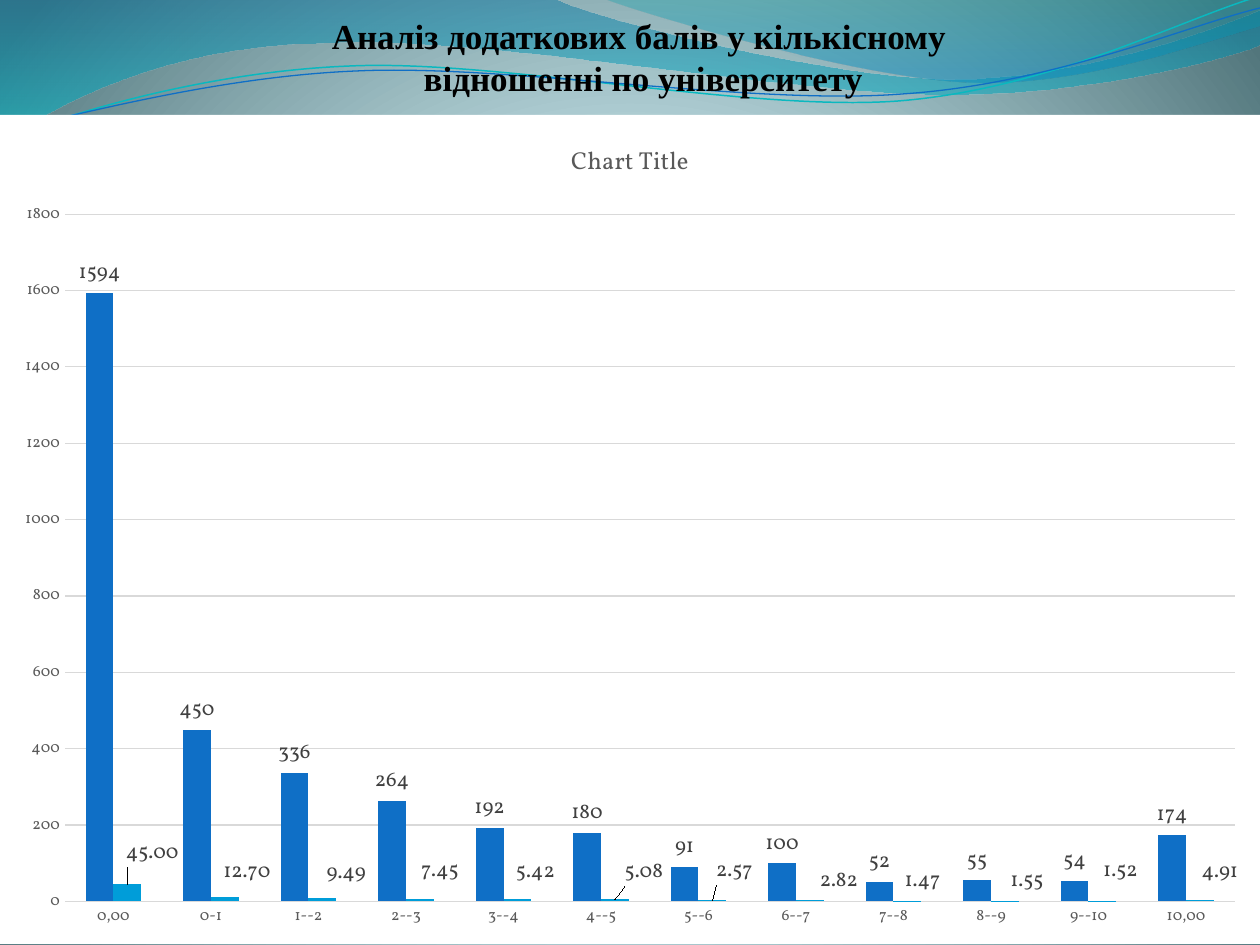
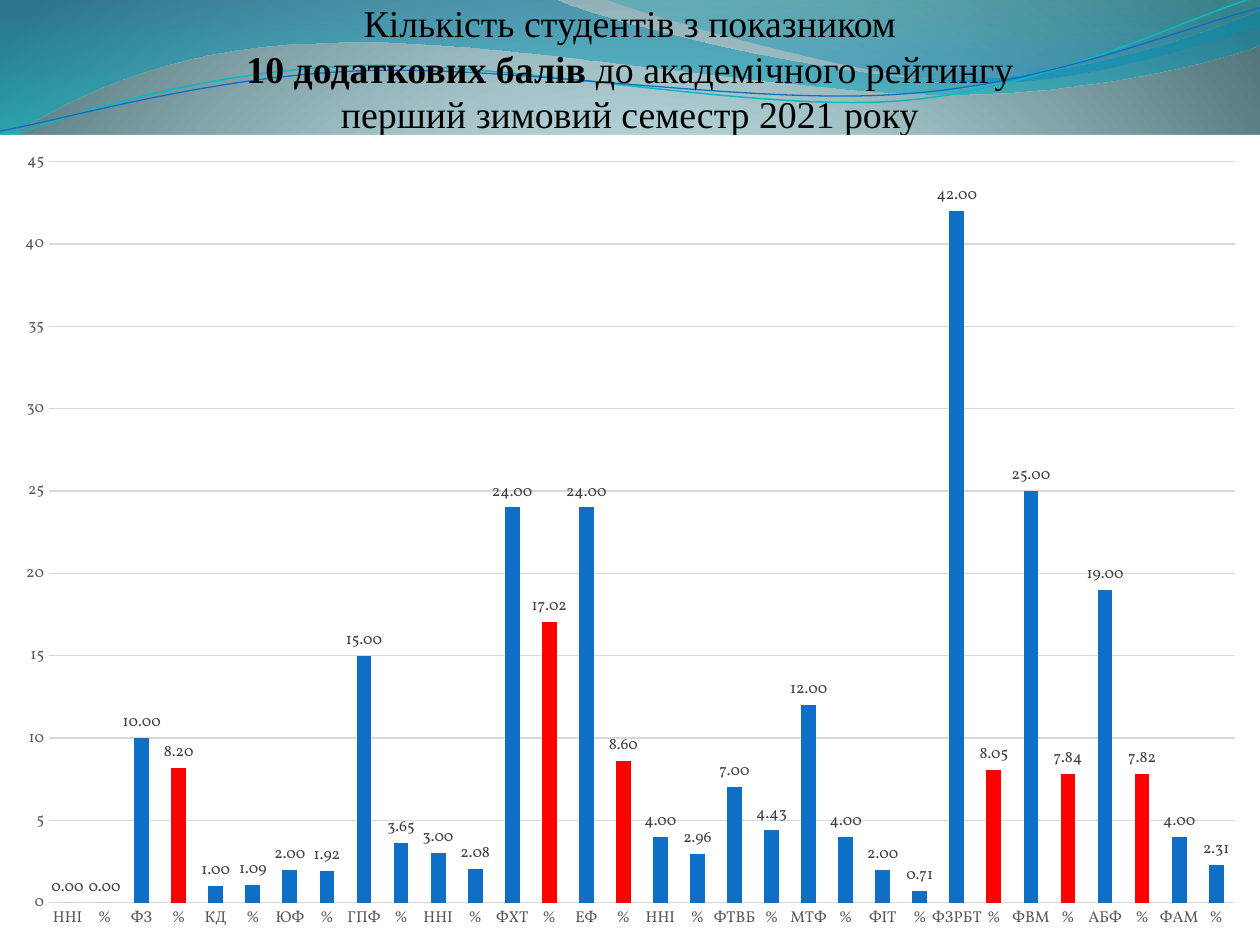
from lxml import etree
from pptx import Presentation
from pptx import util as u
from pptx.chart.data import CategoryChartData
from pptx.dml.color import RGBColor
from pptx.enum import chart as ch
from pptx.enum import text as tx
from pptx.oxml import parse_xml
from pptx.oxml.ns import nsdecls, qn

PX = 914400 / 126

BLACK = RGBColor(0x00, 0x00, 0x00)
WHITE = "FFFFFF"
BLUE = RGBColor(0x0F, 0x6F, 0xC6)
SKY = RGBColor(0x00, 0x9D, 0xD9)
RED = RGBColor(0xFF, 0x00, 0x00)
TEAL = RGBColor(0x0A, 0xB8, 0xBF)
GRID = RGBColor(0xD9, 0xD9, 0xD9)
AXIS_TEXT = RGBColor(0x59, 0x59, 0x59)
LABEL_TEXT = RGBColor(0x40, 0x40, 0x40)
TITLE_FONT = "Times New Roman"
CHART_FONT = "Vollkorn"

# Gradient stops: position %, colour, opacity %
BACKDROP = [(0, "DEFBFF", 100), (25, "DDFAFF", 100), (100, "52767C", 100)]
RADIAL = ('<a:path path="circle"><a:fillToRect l="10000" t="110000" '
          'r="10000" b="100000"/></a:path>')
DOWNWARD = '<a:lin ang="5400000" scaled="0"/>'

# Outlines in px: a pair is a straight step, three pairs are a Bezier curve
BANDS = [
    ([(0, 0), (554, -1),
      ((600, 21), (837, 79), (955, 79)), ((1074, 79), (1207, 33), (1260, 11)),
      (1261, 45), ((1238, 55), (1096, 96), (940, 94)),
      ((784, 94), (481, 35), (324, 43)), ((163, 45), (58, 105), (-1, 142))],
     [(0, "0074A1", 45), (100, "00C6CF", 55)]),
    ([(604, -1), ((641, 14), (859, 78), (969, 82)),
      ((1079, 87), (1211, 40), (1260, 26)), (1260, 0)],
     [(0, "00A1A9", 30), (80, "008BBF", 45)]),
]
RIBBONS = [
    ([(0, 140), ((60, 117), (199, 72), (349, 66)),
      ((498, 59), (747, 112), (898, 101)), ((1050, 89), (1182, 19), (1257, -3))],
     TEAL, 0.85),
    ([(0, 131), ((59, 121), (207, 77), (357, 71)),
      ((508, 64), (752, 106), (903, 94)), ((1053, 84), (1186, 26), (1260, 8))],
     BLUE, 0.75),
]

FACULTIES = [
    ("ННІ", 0, 0), ("ФЗ", 10, 8.2), ("КД", 1, 1.09), ("ЮФ", 2, 1.92),
    ("ГПФ", 15, 3.65), ("ННІ", 3, 2.08), ("ФХТ", 24, 17.02), ("ЕФ", 24, 8.6),
    ("ННІ", 4, 2.96), ("ФТВБ", 7, 4.43), ("МТФ", 12, 4), ("ФІТ", 2, 0.71),
    ("ФЗРБТ", 42, 8.05), ("ФВМ", 25, 7.84), ("АБФ", 19, 7.82), ("ФАМ", 4, 2.31),
]
HIGH_SHARE = 7

SLIDES = [
    dict(
        title=[[("Аналіз додаткових балів у кількісному", True)],
               [(" відношенні по університету", True)]],
        title_box=(72, 8, 1134, 97), title_size=20,
        title_anchor=tx.MSO_ANCHOR.TOP, title_insets=(13, 6, 13, 6),
        chart_title="Chart Title", chart_box=(0, 115, 1260, 829), label_size=12,
        categories=["0,00", "0-1", "1--2", "2--3", "3--4", "4--5", "5--6",
                    "6--7", "7--8", "8--9", "9--10", "10,00"],
        series=[
            dict(values=[1594, 450, 336, 264, 192, 180, 91, 100, 52, 55, 54, 174],
                 color=BLUE, format="General"),
            dict(values=[45, 12.7, 9.49, 7.45, 5.42, 5.08, 2.57, 2.82, 1.47,
                         1.55, 1.52, 4.91],
                 color=SKY, format="0.00",
                 label_shifts=[(25, -12), (22, -5), (24, -5), (20, -8), (18, -8),
                               (29, -8), (22, -10), (29, 0), (15, 0), (22, 0),
                               (18, -10), (20, -8)]),
        ],
    ),
    dict(
        title=[[("Кількість студентів з показником", False)],
               [(" ", False), ("10 додаткових балів ", True),
                ("до академічного рейтингу ", False)],
               [("перший зимовий семестр 2021 року", False)]],
        title_box=(63, 37, 1134, 99), title_size=21.6,
        title_anchor=tx.MSO_ANCHOR.BOTTOM, title_insets=(0, 6, 0, 0),
        chart_title=None, chart_box=(0, 135, 1260, 810), label_size=9,
        categories=[c for name, _, _ in FACULTIES for c in (name, "%")],
        series=[
            dict(values=[v for _, count, share in FACULTIES for v in (count, share)],
                 color=BLUE, format="0.00",
                 red_points=[2 * i + 1 for i, (_, _, share) in enumerate(FACULTIES)
                             if share > HIGH_SHARE]),
        ],
    ),
]


def px(*lengths):
    return [u.Emu(round(n * PX)) for n in lengths]


def set_gradient(element, stops, shade):
    """Turn the first solid fill inside element into a gradient."""
    marks = "".join(
        f'<a:gs pos="{pos * 1000}"><a:srgbClr val="{color}">'
        f'<a:alpha val="{opacity * 1000}"/></a:srgbClr></a:gs>'
        for pos, color, opacity in stops)
    solid = next(element.iter(qn("a:solidFill")))
    solid.getparent().replace(solid, parse_xml(
        f'<a:gradFill {nsdecls("a")} rotWithShape="1">'
        f'<a:gsLst>{marks}</a:gsLst>{shade}</a:gradFill>'))


def is_curve(step):
    return len(step) == 3


def add_outline(slide, outline, close):
    """Build through all points, then join each curve's three into a Bezier."""
    start, *steps = outline
    points = [p for step in steps for p in (step if is_curve(step) else [step])]
    builder = slide.shapes.build_freeform(*start, scale=PX)
    builder.add_line_segments(points, close=close)
    shape = builder.convert_to_shape()
    shape.shadow.inherit = False
    segments = iter(list(shape.element.iter(qn("a:lnTo"))))
    for step in steps:
        first = next(segments)
        if is_curve(step):
            curve = etree.Element(qn("a:cubicBezTo"))
            first.addprevious(curve)
            for segment in (first, next(segments), next(segments)):
                curve.append(segment[0])
                segment.getparent().remove(segment)
    return shape


def decorate_master(master, slide):
    """Outlines can only be built on a slide, so they are then moved."""
    master.background.fill.solid()
    master.background.fill.fore_color.rgb = BLACK
    set_gradient(master.element, BACKDROP, RADIAL)
    waves = []
    for outline, stops in BANDS:
        band = add_outline(slide, outline, True)
        band.line.fill.background()
        band.fill.solid()
        band.fill.fore_color.rgb = BLACK
        set_gradient(band.element, stops, DOWNWARD)
        waves.append(band)
    for outline, color, width in RIBBONS:
        ribbon = add_outline(slide, outline, False)
        ribbon.fill.background()
        ribbon.line.color.rgb = color
        ribbon.line.width = u.Pt(width)
        waves.append(ribbon)
    for place, wave in enumerate(waves, start=2):
        master.shapes.element.insert(place, wave.element)


def set_font(font, name, size, color):
    font.name = name
    font.size = u.Pt(size)
    font.color.rgb = color


def fill_title(title, content):
    title.left, title.top, title.width, title.height = px(*content["title_box"])
    frame = title.text_frame
    frame.word_wrap = True
    frame.auto_size = tx.MSO_AUTO_SIZE.NONE
    frame.vertical_anchor = content["title_anchor"]
    (frame.margin_left, frame.margin_top,
     frame.margin_right, frame.margin_bottom) = px(*content["title_insets"])
    paragraph = frame.paragraphs[0]
    paragraph.alignment = tx.PP_ALIGN.CENTER
    set_font(paragraph.font, TITLE_FONT, content["title_size"], BLACK)
    for number, line in enumerate(content["title"]):
        if number:
            paragraph.add_line_break()
        for words, bold in line:
            run = paragraph.add_run()
            run.text = words
            run.font.bold = bold


def shift_labels(series, part, size, chart_box):
    """Move each value label by its own px offset, without leader lines."""
    for i in range(len(part["label_shifts"])):
        label = series.points[i].data_label
        set_font(label.font, CHART_FONT, size, LABEL_TEXT)
        label.position = ch.XL_LABEL_POSITION.OUTSIDE_END
    labels = series.data_labels._element
    for mark, (dx, dy) in zip(labels.findall(qn("c:dLbl")), part["label_shifts"]):
        index = mark.find(qn("c:idx"))
        number_format = etree.Element(qn("c:numFmt"), formatCode=part["format"],
                                      sourceLinked="0")
        layout = parse_xml(
            f'<c:layout {nsdecls("c")}><c:manualLayout>'
            f'<c:x val="{dx / chart_box[2]:.4f}"/><c:y val="{dy / chart_box[3]:.4f}"/>'
            '</c:manualLayout></c:layout>')
        index.addnext(number_format)
        index.addnext(layout)
    labels.append(parse_xml(
        f'<c:extLst {nsdecls("c")}><c:ext uri="{{CE6537A1-D6FC-4f65-9D91-7224C49458BB}}" '
        'xmlns:c15="http://schemas.microsoft.com/office/drawing/2012/chart">'
        '<c15:showLeaderLines val="0"/></c:ext></c:extLst>'))


def style_axes(chart):
    for axis in (chart.category_axis, chart.value_axis):
        axis.major_tick_mark = axis.minor_tick_mark = ch.XL_TICK_MARK.NONE
        axis.format.line.fill.background()
        set_font(axis.tick_labels.font, CHART_FONT, 9, AXIS_TEXT)
    chart.value_axis.tick_labels.number_format = "General"
    chart.value_axis.tick_labels.number_format_is_linked = False
    grid = chart.value_axis.major_gridlines.format.line
    grid.color.rgb = GRID
    grid.width = u.Pt(0.75)


def add_columns(slide, content):
    data = CategoryChartData()
    data.categories = content["categories"]
    for number, part in enumerate(content["series"], start=1):
        data.add_series(f"Series {number}", part["values"])
    chart = slide.shapes.add_chart(ch.XL_CHART_TYPE.COLUMN_CLUSTERED,
                                   *px(*content["chart_box"]), data).chart
    set_font(chart.font, CHART_FONT, 10, BLACK)
    chart.element.find(qn("c:txPr")).addprevious(parse_xml(
        f'<c:spPr {nsdecls("c", "a")}><a:solidFill><a:srgbClr val="{WHITE}"/>'
        '</a:solidFill><a:ln><a:noFill/></a:ln></c:spPr>'))
    chart.has_legend = False
    chart.has_title = bool(content["chart_title"])
    if chart.has_title:
        heading = chart.chart_title.text_frame
        heading.text = content["chart_title"]
        set_font(heading.paragraphs[0].font, CHART_FONT, 14, AXIS_TEXT)
        heading.paragraphs[0].font.bold = False
    style_axes(chart)

    plot = chart.plots[0]
    plot.gap_width = 150
    plot.overlap = 0
    plot.vary_by_categories = False
    for series, part in zip(plot.series, content["series"]):
        series.format.fill.solid()
        series.format.fill.fore_color.rgb = part["color"]
        labels = series.data_labels
        labels.show_value = True
        labels.number_format = part["format"]
        labels.number_format_is_linked = False
        labels.position = ch.XL_LABEL_POSITION.OUTSIDE_END
        set_font(labels.font, CHART_FONT, content["label_size"], LABEL_TEXT)
        for i in part.get("red_points", []):
            red = series.points[i].format.fill
            red.solid()
            red.fore_color.rgb = RED
        if "label_shifts" in part:
            shift_labels(series, part, content["label_size"], content["chart_box"])


def main():
    prs = Presentation()
    prs.slide_width, prs.slide_height = px(1260, 945)
    title_only = prs.slide_layouts[5]
    for number, content in enumerate(SLIDES):
        slide = prs.slides.add_slide(title_only)
        if number == 0:
            decorate_master(prs.slide_master, slide)
        fill_title(slide.shapes.title, content)
        add_columns(slide, content)
    prs.save("out.pptx")


if __name__ == "__main__":
    main()
